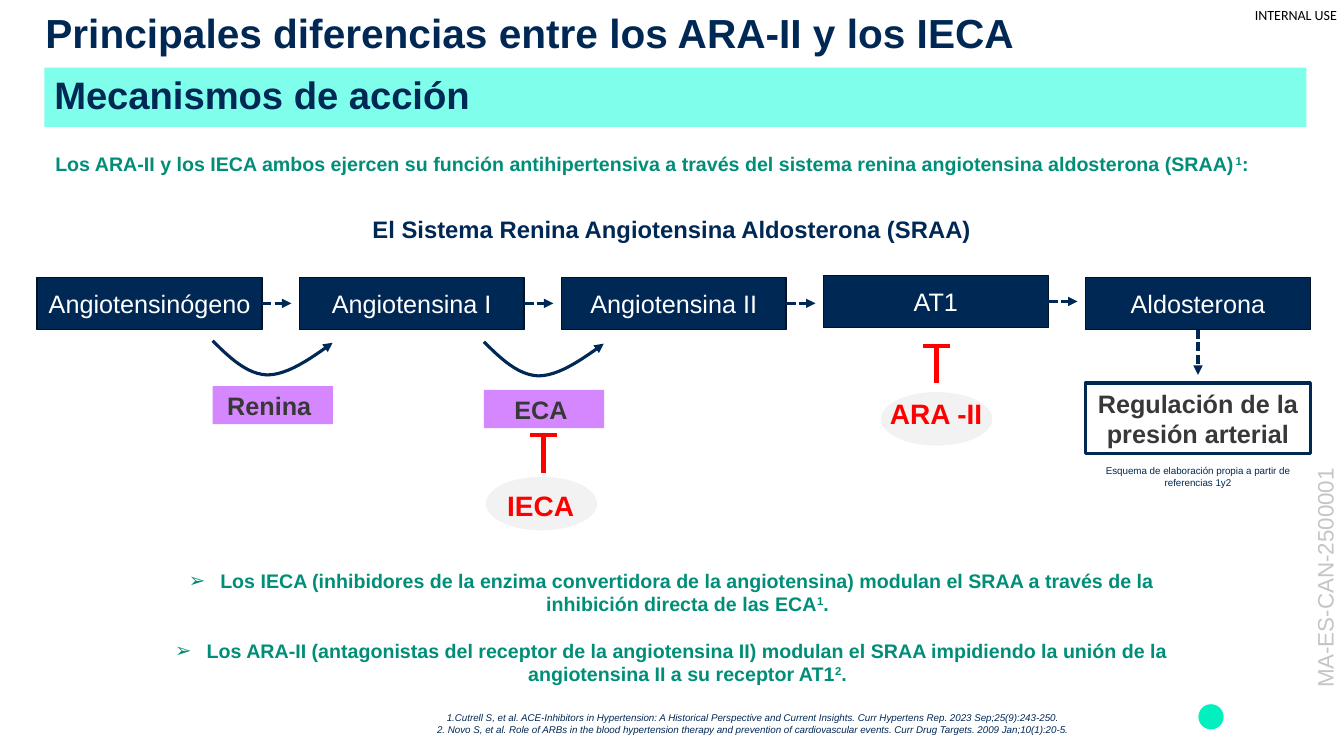
"""Build the slide that compares how ARA-II and IECA drugs act on the SRAA."""
from lxml import etree
from pptx import Presentation
from pptx.dml.color import RGBColor
from pptx.enum.dml import MSO_LINE
from pptx.enum.shapes import MSO_CONNECTOR, MSO_SHAPE
from pptx.enum.text import MSO_ANCHOR, PP_ALIGN
from pptx.oxml.ns import qn
from pptx.util import Pt

NAVY, GREEN, RED, WHITE, GRAY = "002855", "008E78", "FF0000", "FFFFFF", "F2F2F2"


def write_text(shape, text, size=18, color=NAVY, bold=False, italic=False, font="Arial",
               align=PP_ALIGN.CENTER, anchor=MSO_ANCHOR.TOP, margins=(7.2, 3.6),
               wrap=True, spacing=1.0, gap=0, bullet=None):
    """Fill a shape with one paragraph per line; parts between ^ marks are superscript."""
    frame = shape.text_frame
    frame.word_wrap = wrap
    frame.vertical_anchor = anchor
    frame.margin_left = frame.margin_right = Pt(margins[0])
    frame.margin_top = frame.margin_bottom = Pt(margins[1])
    for index, line in enumerate(text.split("\n")):
        paragraph = frame.add_paragraph() if index else frame.paragraphs[0]
        paragraph.alignment = align
        paragraph.line_spacing = spacing
        paragraph.space_before = Pt(gap if index else 0)
        if bullet:
            properties = paragraph._p.get_or_add_pPr()
            properties.set("marL", str(Pt(22.5)))
            properties.set("indent", str(-Pt(22.5)))
            etree.SubElement(properties, qn("a:buFont"), typeface="Wingdings")
            properties[-1].set("typeface", "Arial")
            etree.SubElement(properties, qn("a:buChar"), char=bullet)
        for part, piece in enumerate(line.split("^")):
            run = paragraph.add_run()
            run.text = piece
            run.font.name = font
            run.font.size = Pt(size)
            run.font.bold = bold
            run.font.italic = italic
            run.font.color.rgb = RGBColor.from_string(color)
            if part % 2:
                run._r.get_or_add_rPr().set("baseline", "30000")


def paint(item, fill=None, line=None, width=1, dashed=False, arrow=False):
    """Set fill and line of a shape or connector and take its shadow away."""
    if fill:
        item.fill.solid()
        item.fill.fore_color.rgb = RGBColor.from_string(fill)
    elif hasattr(item, "fill"):
        item.fill.background()
    if line:
        item.line.color.rgb = RGBColor.from_string(line)
        item.line.width = Pt(width)
    else:
        item.line.fill.background()
    if dashed:
        item.line.dash_style = MSO_LINE.SQUARE_DOT
    if arrow:
        etree.SubElement(item.line._get_or_add_ln(), qn("a:tailEnd"), type="triangle")
    etree.SubElement(item._element.spPr, qn("a:effectLst"))


presentation = Presentation()
presentation.slide_width = Pt(960)
presentation.slide_height = Pt(540)
slide = presentation.slides.add_slide(presentation.slide_layouts[5])
shapes = slide.shapes

title = shapes.title
title.left, title.top, title.width, title.height = Pt(32.4), Pt(-1.4), Pt(828), Pt(49)
write_text(title, "Principales diferencias entre los ARA-II y los IECA", size=29, bold=True,
           align=PP_ALIGN.LEFT, anchor=MSO_ANCHOR.MIDDLE, margins=(0, 0))

band = shapes.add_shape(MSO_SHAPE.RECTANGLE, Pt(31.7), Pt(48.3), Pt(901.4), Pt(42.4))
paint(band, fill="7FFFEB")
write_text(band, "Mecanismos de acción", size=27.3, bold=True, align=PP_ALIGN.LEFT,
           anchor=MSO_ANCHOR.MIDDLE, spacing=0.9)

BOX_WIDTH, BOX_HEIGHT, BOX_STEP = 160.6, 37.4, 187.2
stages = []
for index, name in enumerate(["Angiotensinógeno", "Angiotensina I", "Angiotensina II",
                              "AT1", "Aldosterona"]):
    top = 196.6 if name == "AT1" else 198
    stage = shapes.add_shape(MSO_SHAPE.RECTANGLE, Pt(26.6 + index * BOX_STEP), Pt(top),
                             Pt(BOX_WIDTH), Pt(BOX_HEIGHT))
    paint(stage, fill=NAVY, line="001225")
    write_text(stage, name, color=WHITE, anchor=MSO_ANCHOR.MIDDLE)
    stages.append(stage)

for stage in stages:
    right, middle = stage.left + stage.width, stage.top + stage.height // 2
    center, bottom = stage.left + stage.width // 2, stage.top + stage.height
    if stage is stages[-1]:
        side, end = 2, (center, bottom + Pt(32.4))
    else:
        side, end = 3, (right + Pt(20.9), middle)
    arrow = shapes.add_connector(MSO_CONNECTOR.STRAIGHT, right, middle, *end)
    arrow.begin_connect(stage, side)
    paint(arrow, line=NAVY, width=2.25, dashed=True, arrow=True)

CURVES = [[(0, 0), (12.2, 12.2), (24.5, 23.8), (38.9, 24.4)],
          [(38.9, 24.4), (53.3, 24.4), (69.8, 13), (85.7, 1.4)]]
STEPS = 12
for enzyme, left, curve_top, label_top in [("Renina ", 151.9, 243.4, 275.8),
                                           ("ECA ", 345.6, 244.1, 278.6)]:
    points = []
    for curve in CURVES:
        for step in range(1, STEPS + 1):
            t = step / STEPS
            weights = ((1 - t) ** 3, 3 * t * (1 - t) ** 2, 3 * t * t * (1 - t), t ** 3)
            x, y = (sum(w * p[axis] for w, p in zip(weights, curve)) for axis in (0, 1))
            points.append((Pt(left + x), Pt(curve_top + y)))
    builder = shapes.build_freeform(Pt(left), Pt(curve_top))
    builder.add_line_segments(points, close=False)
    paint(builder.convert_to_shape(), line=NAVY, width=2.25, arrow=True)
    label = shapes.add_shape(MSO_SHAPE.RECTANGLE, Pt(left), Pt(label_top), Pt(85.9), Pt(27.2))
    paint(label, fill="D487FF")
    write_text(label, enzyme, color="383838", bold=True, anchor=MSO_ANCHOR.MIDDLE)

for drug, center, bar_top, oval_left, oval_top, text_left, text_top in [
        ("IECA ", 388.3, 311, 347, 340.6, 345.6, 347),
        ("ARA -II", 668.9, 247, 629.3, 280.1, 625.7, 281.5)]:
    for ends in [(center, bar_top, center, bar_top + 26.6),
                 (center + 9.6, bar_top, center - 9.6, bar_top)]:
        paint(shapes.add_connector(MSO_CONNECTOR.STRAIGHT, *map(Pt, ends)), line=RED, width=3)
    oval = shapes.add_shape(MSO_SHAPE.OVAL, Pt(oval_left), Pt(oval_top), Pt(79.5), Pt(38.2))
    paint(oval, fill=GRAY)
    label = shapes.add_textbox(Pt(text_left), Pt(text_top), Pt(85.9), Pt(27.2))
    write_text(label, drug, size=20, color=RED, bold=True, anchor=MSO_ANCHOR.MIDDLE)

result = shapes.add_shape(MSO_SHAPE.RECTANGLE, Pt(775.4), Pt(273.6), Pt(BOX_WIDTH), Pt(50.4))
paint(result, line=NAVY, width=2.25)
write_text(result, "Regulación de la presión arterial", color="383838", bold=True,
           anchor=MSO_ANCHOR.MIDDLE)

emblem = shapes.add_shape(MSO_SHAPE.OVAL, Pt(856), Pt(503), Pt(18), Pt(18))
paint(emblem, fill="00F0BE")

green_text = dict(size=14, color=GREEN, bold=True)
for text, place, style in [
        ("INTERNAL USE", (896.4, 5, 61.2, 12.2),
         dict(size=10, font="Calibri", color="000000", align=PP_ALIGN.LEFT,
              margins=(0, 0), wrap=False)),
        ("El Sistema Renina Angiotensina Aldosterona (SRAA)", (191.5, 149.8, 576.7, 28.1),
         dict(size=17, bold=True)),
        ("Los ARA-II y los IECA ambos ejercen su función antihipertensiva a través del "
         "sistema renina angiotensina aldosterona (SRAA)^1^:", (32.4, 105.1, 901.4, 24.5),
         dict(green_text, align=PP_ALIGN.JUSTIFY)),
        ("Los IECA (inhibidores de la enzima convertidora de la angiotensina) modulan el "
         "SRAA a través de la inhibición directa de las ECA^1^.\n"
         "Los ARA-II (antagonistas del receptor de la angiotensina II) modulan el SRAA "
         "impidiendo la unión de la angiotensina II a su receptor AT1^2^.",
         (106.6, 402.5, 746.6, 92.2), dict(green_text, bullet="➢", gap=16.5)),
        ("1.Cutrell S, et al. ACE-Inhibitors in Hypertension: A Historical Perspective and "
         "Current Insights. Curr Hypertens Rep. 2023 Sep;25(9):243-250.\n"
         "2. Novo S, et al. Role of ARBs in the blood hypertension therapy and prevention of "
         "cardiovascular events. Curr Drug Targets. 2009 Jan;10(1):20-5.",
         (262.1, 504.7, 550.8, 26.6), dict(size=7, italic=True)),
        ("Esquema de elaboración propia a partir de referencias 1y2",
         (775.4, 328.3, BOX_WIDTH, 24.5), dict(size=7))]:
    write_text(shapes.add_textbox(*map(Pt, place)), text, **style)

code = shapes.add_textbox(Pt(850.3), Pt(399.6), Pt(192.2), Pt(26.6))
code.rotation = 270
write_text(code, "MA-ES-CAN-2500001", size=16, color="C5C5C5")

presentation.save("out.pptx")
